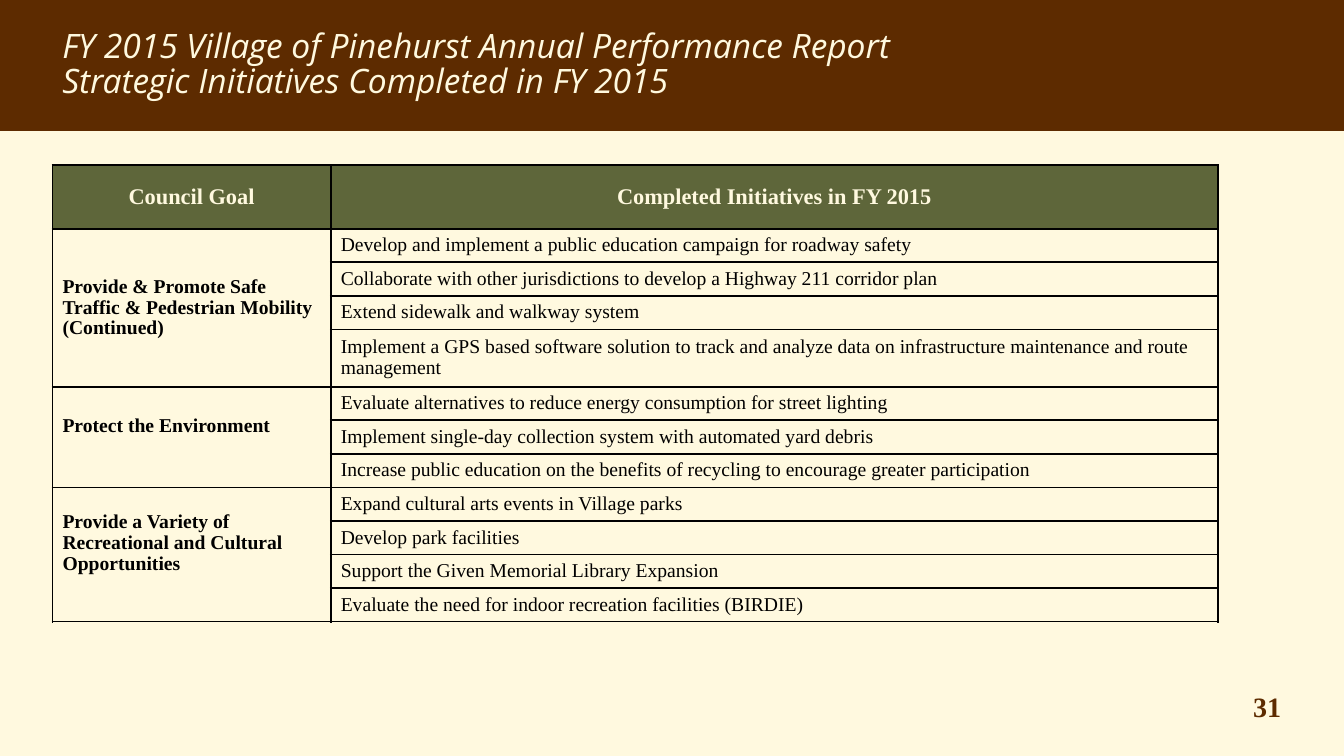
"""Build the slide of strategic initiatives completed in FY 2015."""
from dataclasses import dataclass

from lxml.etree import SubElement
from pptx import Presentation
from pptx.dml.color import RGBColor
from pptx.enum.shapes import MSO_SHAPE
from pptx.enum.text import MSO_ANCHOR, PP_ALIGN
from pptx.oxml.ns import qn
from pptx.slide import Slide
from pptx.table import Table, _Cell
from pptx.text.text import TextFrame
from pptx.util import Inches, Pt

BROWN = RGBColor(0x5D, 0x2B, 0x00)
CREAM = RGBColor(0xFF, 0xF9, 0xDF)
GREEN = RGBColor(0x5E, 0x66, 0x3A)
BLACK = RGBColor(0x00, 0x00, 0x00)
SLIDE_WIDTH = 13.33
TABLE_HEIGHT = 4.53
HEADER_HEIGHT = 0.63
TALL_ROW_HEIGHT = 0.57
COLUMN_WIDTHS = (2.76, 8.8)
HEADINGS = ("Council Goal", "Completed Initiatives in FY 2015")
TITLE = (
    "FY 2015 Village of Pinehurst Annual Performance Report",
    "Strategic Initiatives Completed in FY 2015",
)


@dataclass(frozen=True)
class TextStyle:
    font: str
    size: float
    color: RGBColor
    bold: bool = False
    italic: bool = False
    align: PP_ALIGN = PP_ALIGN.LEFT
    line_spacing: float = 1.0


@dataclass(frozen=True)
class Goal:
    name: str
    initiatives: tuple[str, ...]
    margin_bottom: float = 0.05


TITLE_STYLE = TextStyle("Open Sans", 24, CREAM, italic=True, line_spacing=0.87)
NUMBER_STYLE = TextStyle("Times New Roman", 20, BROWN, bold=True)
HEADING_STYLE = TextStyle("Times New Roman", 16, CREAM, bold=True, align=PP_ALIGN.CENTER)
GOAL_STYLE = TextStyle("Times New Roman", 14, BLACK, bold=True, line_spacing=0.96)
INITIATIVE_STYLE = TextStyle("Times New Roman", 14, BLACK, line_spacing=0.96)

LONG_INITIATIVE = (
    "Implement a GPS based software solution to track and analyze data on "
    "infrastructure maintenance and route management"
)
GOALS = (
    Goal("Provide & Promote Safe Traffic & Pedestrian Mobility (Continued)", (
        "Develop and implement a public education campaign for roadway safety",
        "Collaborate with other jurisdictions to develop a Highway 211 corridor plan",
        "Extend sidewalk and walkway system",
        LONG_INITIATIVE,
    )),
    Goal("Protect the Environment", (
        "Evaluate alternatives to reduce energy consumption for street lighting",
        "Implement single-day collection system with automated yard debris",
        "Increase public education on the benefits of recycling to encourage greater participation",
    ), 0.27),
    Goal("Provide a Variety of Recreational and Cultural Opportunities", (
        "Expand cultural arts events in Village parks",
        "Develop park facilities",
        "Support the Given Memorial Library Expansion",
        "Evaluate the need for indoor recreation facilities (BIRDIE)",
    ), 0.27),
)


def write_text(frame: TextFrame, lines: tuple[str, ...], style: TextStyle) -> None:
    """Fill a text frame with one styled paragraph per line."""
    frame.word_wrap = True
    frame.text = "\n".join(lines)
    for paragraph in frame.paragraphs:
        paragraph.alignment = style.align
        paragraph.line_spacing = style.line_spacing
        paragraph.font.name = style.font
        paragraph.font.size = Pt(style.size)
        paragraph.font.color.rgb = style.color
        paragraph.font.bold = style.bold
        paragraph.font.italic = style.italic


def add_text(slide: Slide, box: tuple[float, ...], lines: tuple[str, ...], style: TextStyle) -> None:
    """Add a text box at left, top, width, height in inches."""
    text_box = slide.shapes.add_textbox(*map(Inches, box))
    write_text(text_box.text_frame, lines, style)


def add_borders(cell: _Cell) -> None:
    """Draw a black line on every side of a cell."""
    properties = cell._tc.get_or_add_tcPr()
    for position, side in enumerate(("a:lnL", "a:lnR", "a:lnT", "a:lnB")):
        line = SubElement(properties, qn(side), w=str(Pt(1.5)))
        fill = SubElement(line, qn("a:solidFill"))
        SubElement(fill, qn("a:srgbClr"), val=str(BLACK))
        properties.insert(position, line)


def write_cell(cell: _Cell, text: str, style: TextStyle) -> None:
    """Write middle-anchored text in a cell."""
    write_text(cell.text_frame, (text,), style)
    cell.vertical_anchor = MSO_ANCHOR.MIDDLE


def fill_goals(table: Table) -> None:
    """Write each goal beside its initiatives and merge its cells."""
    row = 1
    for goal in GOALS:
        last_row = row + len(goal.initiatives) - 1
        goal_cell = table.cell(row, 0)
        goal_cell.merge(table.cell(last_row, 0))
        write_cell(goal_cell, goal.name, GOAL_STYLE)
        goal_cell.margin_bottom = Inches(goal.margin_bottom)
        for offset, initiative in enumerate(goal.initiatives):
            write_cell(table.cell(row + offset, 1), initiative, INITIATIVE_STYLE)
        row = last_row + 1


def add_goal_table(slide: Slide) -> None:
    """Add the table of goals and completed initiatives."""
    initiatives = [initiative for goal in GOALS for initiative in goal.initiatives]
    row_height = (TABLE_HEIGHT - HEADER_HEIGHT - TALL_ROW_HEIGHT) / (len(initiatives) - 1)
    heights = [HEADER_HEIGHT] + [
        TALL_ROW_HEIGHT if initiative == LONG_INITIATIVE else row_height
        for initiative in initiatives
    ]
    table = slide.shapes.add_table(
        len(heights), len(COLUMN_WIDTHS), Inches(0.52), Inches(1.64),
        Inches(sum(COLUMN_WIDTHS)), Inches(TABLE_HEIGHT),
    ).table
    table.horz_banding = False
    for column, width in zip(table.columns, COLUMN_WIDTHS):
        column.width = Inches(width)
    for row_index, (row, height) in enumerate(zip(table.rows, heights)):
        row.height = Inches(height)
        for cell in row.cells:
            cell.fill.solid()
            cell.fill.fore_color.rgb = CREAM if row_index else GREEN
            add_borders(cell)
    for column_index, heading in enumerate(HEADINGS):
        write_cell(table.cell(0, column_index), heading, HEADING_STYLE)
    fill_goals(table)


def add_banner(slide: Slide) -> None:
    """Add the brown band behind the title."""
    banner = slide.shapes.add_shape(
        MSO_SHAPE.RECTANGLE, 0, 0, Inches(SLIDE_WIDTH), Inches(1.3)
    )
    banner.shadow.inherit = False
    banner.fill.solid()
    banner.fill.fore_color.rgb = BROWN
    banner.line.fill.background()


def main() -> None:
    """Build and save the presentation."""
    presentation = Presentation()
    presentation.slide_width = Inches(SLIDE_WIDTH)
    presentation.slide_height = Inches(7.5)
    slide = presentation.slides.add_slide(presentation.slide_layouts[6])
    slide.background.fill.solid()
    slide.background.fill.fore_color.rgb = CREAM
    add_banner(slide)
    add_text(slide, (12.33, 6.79, 0.69, 0.44), ("31",), NUMBER_STYLE)
    add_text(slide, (0.52, 0.25, 12.29, 0.91), TITLE, TITLE_STYLE)
    add_goal_table(slide)
    presentation.save("out.pptx")


if __name__ == "__main__":
    main()
